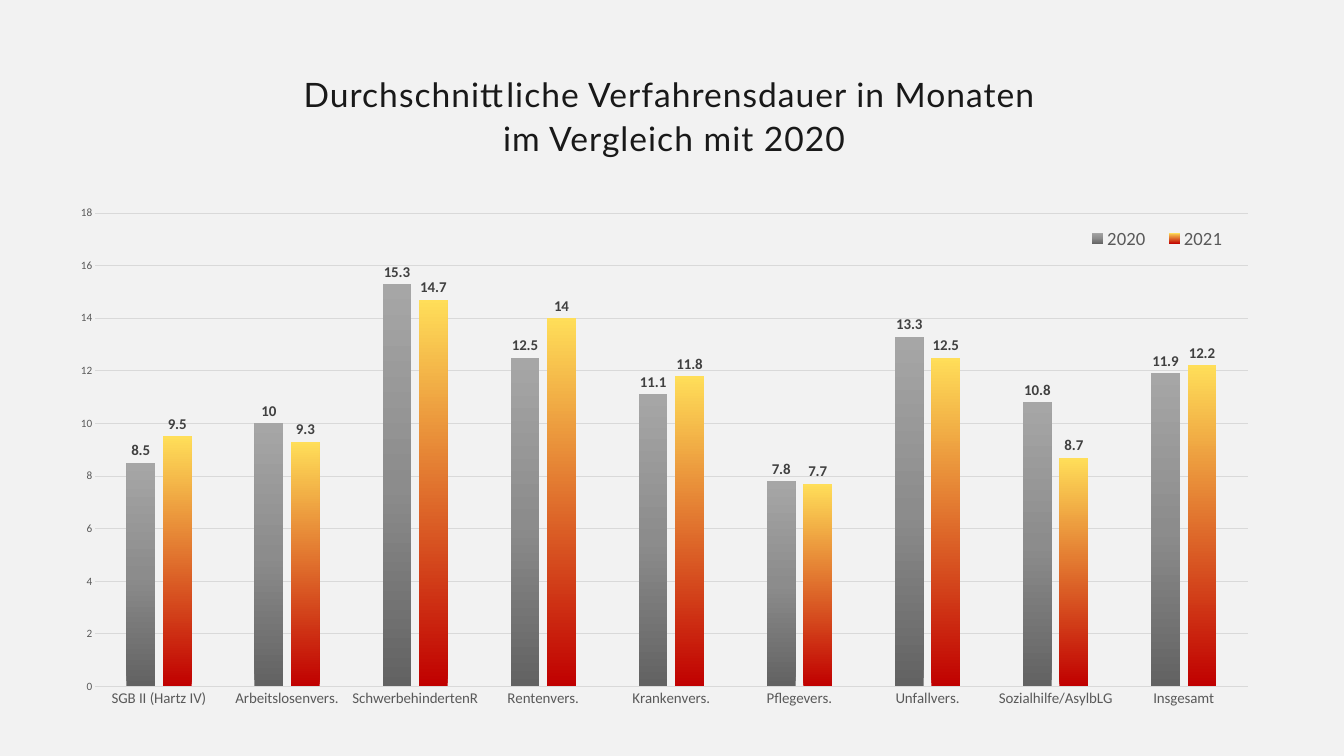
from pptx import Presentation
from pptx.chart.data import CategoryChartData
from pptx.dml.color import RGBColor
from pptx.enum.chart import XL_CHART_TYPE as ChartType, XL_LABEL_POSITION as LabelPosition
from pptx.enum.chart import XL_LEGEND_POSITION as LegendPosition, XL_TICK_MARK as TickMark
from pptx.enum.text import MSO_ANCHOR as Anchor, MSO_AUTO_SIZE as AutoSize, PP_ALIGN as Align
from pptx.oxml import parse_xml
from pptx.oxml.ns import nsdecls, qn
from pptx.util import Pt

TITLE = ["Durchschnittliche Verfahrensdauer in Monaten ", "im Vergleich mit 2020"]
AREAS = ["SGB II (Hartz IV)", "Arbeitslosenvers.", "SchwerbehindertenR", "Rentenvers.",
         "Krankenvers.", "Pflegevers.", "Unfallvers.", "Sozialhilfe/AsylbLG", "Insgesamt"]
MONTHS = {
    "2020": [8.5, 10, 15.3, 12.5, 11.1, 7.8, 13.3, 10.8, 11.9],
    "2021": [9.5, 9.3, 14.7, 14, 11.8, 7.7, 12.5, 8.7, 12.2],
}
GRADIENTS = {
    "2020": [(0, "626262"), (50, "8C8C8C"), (100, "A6A6A6")],
    "2021": [(0, "C00000"), (100, "FFDE59")],
}
COLORS = {"page": "F2F2F2", "title": "191919", "axis": "595959", "label": "404040", "grid": "D9D9D9"}


def rgb(name):
    return RGBColor.from_string(COLORS[name])


def style_font(font, size, color, name="Calibri", bold=False):
    font.size, font.name, font.bold = Pt(size), name, bold
    font.color.rgb = rgb(color)


def style_line(line, color):
    line.color.rgb = rgb(color)
    line.width = Pt(0.75)


def manual_layout(x, y, w, h, inner=False):
    target = '<c:layoutTarget val="inner"/>' if inner else ""
    sizes = "".join(f'<c:{key} val="{value}"/>' for key, value in zip("xywh", (x, y, w, h)))
    return parse_xml(f'<c:layout {nsdecls("c")}><c:manualLayout>{target}<c:xMode val="edge"/>'
                     f'<c:yMode val="edge"/>{sizes}</c:manualLayout></c:layout>')


def drop_layout(element):
    for layout in element.findall(qn("c:layout")):
        element.remove(layout)


def fill_gradient(series, stops):
    series.format.fill.gradient()
    series.format.fill.gradient_angle = 90
    marks = "".join(f'<a:gs pos="{pos * 1000}"><a:srgbClr val="{color}"/></a:gs>' for pos, color in stops)
    old = next(series._element.iter(qn("a:gsLst")))
    old.getparent().replace(old, parse_xml(f'<a:gsLst {nsdecls("a")}>{marks}</a:gsLst>'))


def add_title(page):
    box = page.shapes.title
    box.left, box.top, box.width, box.height = Pt(162), Pt(75), Pt(1121), Pt(91.5)
    frame = box.text_frame
    frame.margin_left = frame.margin_top = frame.margin_right = frame.margin_bottom = 0
    frame.word_wrap, frame.auto_size = True, AutoSize.NONE
    frame.vertical_anchor = Anchor.TOP
    frame.text = "\n".join(TITLE)
    for para in frame.paragraphs:
        para.alignment, para.line_spacing = Align.CENTER, Pt(47.2)
        para.space_before = Pt(0)
        style_font(para.font, 36, "title", "Lato")
        for span in para.runs:
            span._r.get_or_add_rPr().set("spc", "110")


def add_duration_chart(page):
    data = CategoryChartData()
    data.categories = AREAS
    for year, values in MONTHS.items():
        data.add_series(year, values)
    chart = page.shapes.add_chart(ChartType.COLUMN_CLUSTERED, Pt(72), Pt(188.64),
                                  Pt(1350), Pt(580.5), data).chart
    chart.has_title = False
    chart.font.size, chart.font.name = Pt(10), "Calibri"

    plot = chart.plots[0]
    plot.gap_width, plot.overlap, plot.vary_by_categories = 219, -27, False
    for series in plot.series:
        fill_gradient(series, GRADIENTS[series.name])
        labels = series.data_labels
        labels.show_value, labels.position = True, LabelPosition.OUTSIDE_END
        style_font(labels.font, 16, "label", bold=True)

    for axis, size in ((chart.category_axis, 16), (chart.value_axis, 12)):
        axis.major_tick_mark = axis.minor_tick_mark = TickMark.NONE
        style_font(axis.tick_labels.font, size, "axis")
    style_line(chart.category_axis.format.line, "grid")
    scale = chart.value_axis
    scale.minimum_scale, scale.maximum_scale, scale.major_unit = 0, 18, 2
    scale.format.line.fill.background()
    style_line(scale.major_gridlines.format.line, "grid")

    chart.has_legend = True
    legend = chart.legend
    legend.position, legend.include_in_layout = LegendPosition.RIGHT, False
    style_font(legend.font, 20, "axis")
    drop_layout(legend._element)
    legend._element.find(qn("c:legendPos")).addnext(manual_layout(0.8, 0.09, 0.13, 0.05))
    area = next(chart._chartSpace.iter(qn("c:plotArea")))
    drop_layout(area)
    area.insert(0, manual_layout(0.022, 0.068, 0.915, 0.874, inner=True))


deck = Presentation()
deck.slide_width, deck.slide_height = Pt(1440), Pt(810)
page = deck.slides.add_slide(deck.slide_layouts[5])
page.background.fill.solid()
page.background.fill.fore_color.rgb = rgb("page")
add_duration_chart(page)
add_title(page)
deck.save("out.pptx")
